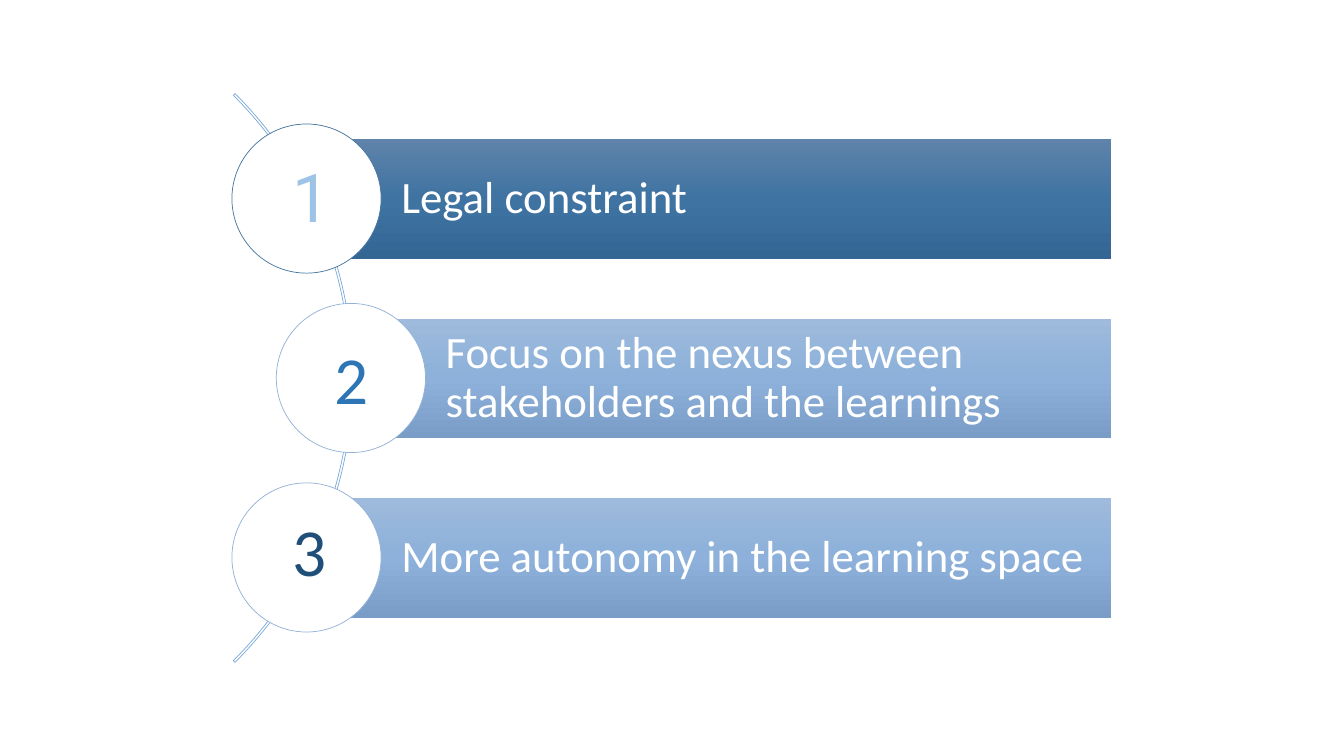
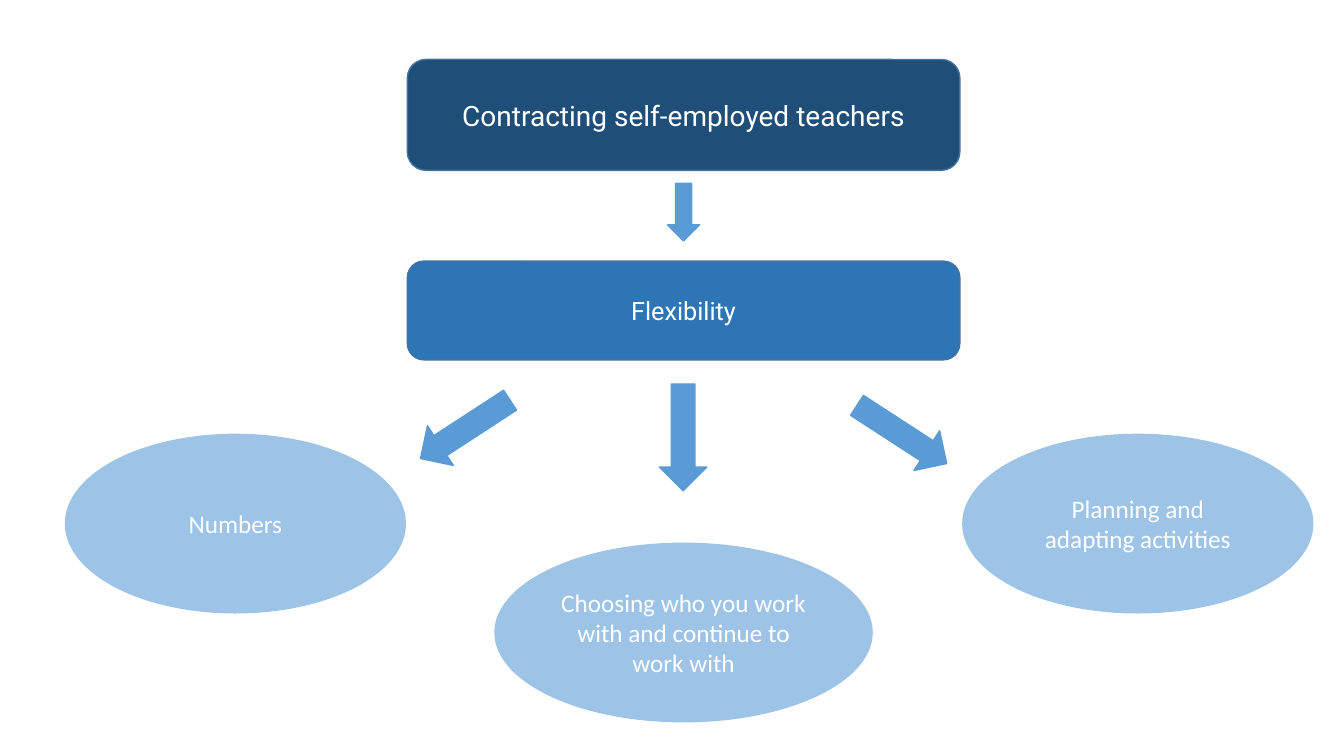
from copy import deepcopy

from pptx import Presentation
from pptx import util as u
from pptx.dml.color import RGBColor
from pptx.enum import shapes, text
from pptx.oxml.ns import qn

PX = 9144  # EMU per px: 100 px to the inch
SHAPE = shapes.MSO_SHAPE
COLORS = {
    "white": "FFFFFF",
    "navy": "1F4E79",
    "blue": "2E75B6",
    "sky": "5B9BD5",
    "pale": "9DC3E6",
    "outline": "43739E",
    "soft outline": "91B1D6",
    "arc": "7AA9DA",
}
DARK_BAND = ("5F83AA", "3F73A2", "346694")
LIGHT_BAND = ("9EBADC", "8DB1DA", "799DC6")


class Deck:
    """Holds the presentation, its style and the slide being filled."""

    def __init__(self, width, height):
        self.prs = Presentation()
        self.prs.slide_width, self.prs.slide_height = width * PX, height * PX
        self.slide = None

    def new_slide(self):
        self.slide = self.prs.slides.add_slide(self.prs.slide_layouts[6])

    def shape(self, kind, box, fill=None, line=None, weight=1):
        shape = self.slide.shapes.add_shape(kind, *(n * PX for n in box))
        shape.shadow.inherit = False
        if fill:
            shape.fill.solid()
            shape.fill.fore_color.rgb = RGBColor.from_string(COLORS[fill])
        else:
            shape.fill.background()
        if line:
            shape.line.color.rgb = RGBColor.from_string(COLORS[line])
            shape.line.width = u.Pt(weight)
        else:
            shape.line.fill.background()
        return shape

    def set_text(self, shape, words, size, font="Calibri", color="white",
                 align=text.PP_ALIGN.CENTER):
        frame = shape.text_frame
        frame.word_wrap = True
        frame.text = words
        paragraph = frame.paragraphs[0]
        paragraph.alignment = align
        paragraph.font.size = u.Pt(size)
        paragraph.font.name = font
        paragraph.font.color.rgb = RGBColor.from_string(COLORS[color])
        return frame

    def band(self, box, words, gradient):
        """Adds a bar shaded from top to bottom, its text clear of the circle."""
        band = self.shape(SHAPE.RECTANGLE, box)
        band.fill.gradient()
        band.fill.gradient_angle = 270
        stop_list = band.element.find(".//" + qn("a:gsLst"))
        stop_list.insert(1, deepcopy(stop_list[0]))
        for stop, position, color in zip(band.fill.gradient_stops, (0, 0.5, 1), gradient):
            stop.position = position
            stop.color.rgb = RGBColor.from_string(color)
        frame = self.set_text(band, words, 32, align=text.PP_ALIGN.LEFT)
        frame.margin_left = 94 * PX
        frame.margin_right = frame.margin_top = frame.margin_bottom = 9 * PX
        frame.paragraphs[0].line_spacing = 0.9

    def number(self, left, top, digit, font, color):
        label = self.slide.shapes.add_textbox(left * PX, top * PX, 60 * PX, 91 * PX)
        self.set_text(label, digit, 48, font, color, text.PP_ALIGN.LEFT)

    def node(self, kind, box, words, fill, line, size=18, font="Calibri"):
        self.set_text(self.shape(kind, box, fill, line), words, size, font)

    def down_arrow(self, box, rotation=0):
        self.shape(SHAPE.DOWN_ARROW, box, "sky", "sky").rotation = rotation


def add_reasons(deck):
    deck.new_slide()
    arc = deck.shape(SHAPE.BLOCK_ARC, (-448, -24, 798, 798), line="arc", weight=0.5)
    # Angles count in 60000ths of a degree, and adjustments in 100000ths
    for i, value in enumerate((315 * 0.6, 45 * 0.6, 0.003)):
        arc.adjustments[i] = value

    reasons = [
        ("Legal constraint", 304, DARK_BAND, "outline"),
        ("Focus on the nexus between stakeholders and the learnings", 348,
         LIGHT_BAND, "soft outline"),
        ("More autonomy in the learning space", 304, LIGHT_BAND, "soft outline"),
    ]
    pitch, circle, band_height, right = 178, 148, 119, 1102
    for row, (words, center, gradient, outline) in enumerate(reasons):
        middle = 197 + row * pitch
        deck.band((center, middle - band_height // 2, right - center, band_height),
                  words, gradient)
        deck.shape(SHAPE.OVAL, (center - circle // 2, middle - circle // 2, circle, circle),
                   "white", outline, 0.5)

    deck.number(280, 149, "1", "Roboto", "pale")
    deck.number(322, 330, "2", "Calibri", "blue")
    deck.number(280, 500, "3", "Calibri", "navy")


def add_flexibility(deck):
    deck.new_slide()
    deck.node(SHAPE.ROUNDED_RECTANGLE, (404, 59, 548, 110),
              "Contracting self-employed teachers", "navy", "outline", 20, "Roboto")
    deck.node(SHAPE.ROUNDED_RECTANGLE, (404, 259, 548, 98),
              "Flexibility", "blue", "outline", font="Roboto")
    outcomes = [
        (65, 431, 337, "Numbers"),
        (491, 539, 374, "Choosing who you work with and continue to work with"),
        (955, 431, 347, "Planning and adapting activities"),
    ]
    for left, top, width, words in outcomes:
        deck.node(SHAPE.OVAL, (left, top, width, 177), words, "pale", "pale")

    deck.down_arrow((662, 182, 32, 57))
    for left, top, rotation in ((438, 373, 56.9), (654, 381, 0), (871, 378, 303)):
        deck.down_arrow((left, top, 47, 106), rotation)


def main():
    deck = Deck(1333, 750)
    add_reasons(deck)
    add_flexibility(deck)
    deck.prs.save("out.pptx")


if __name__ == "__main__":
    main()
